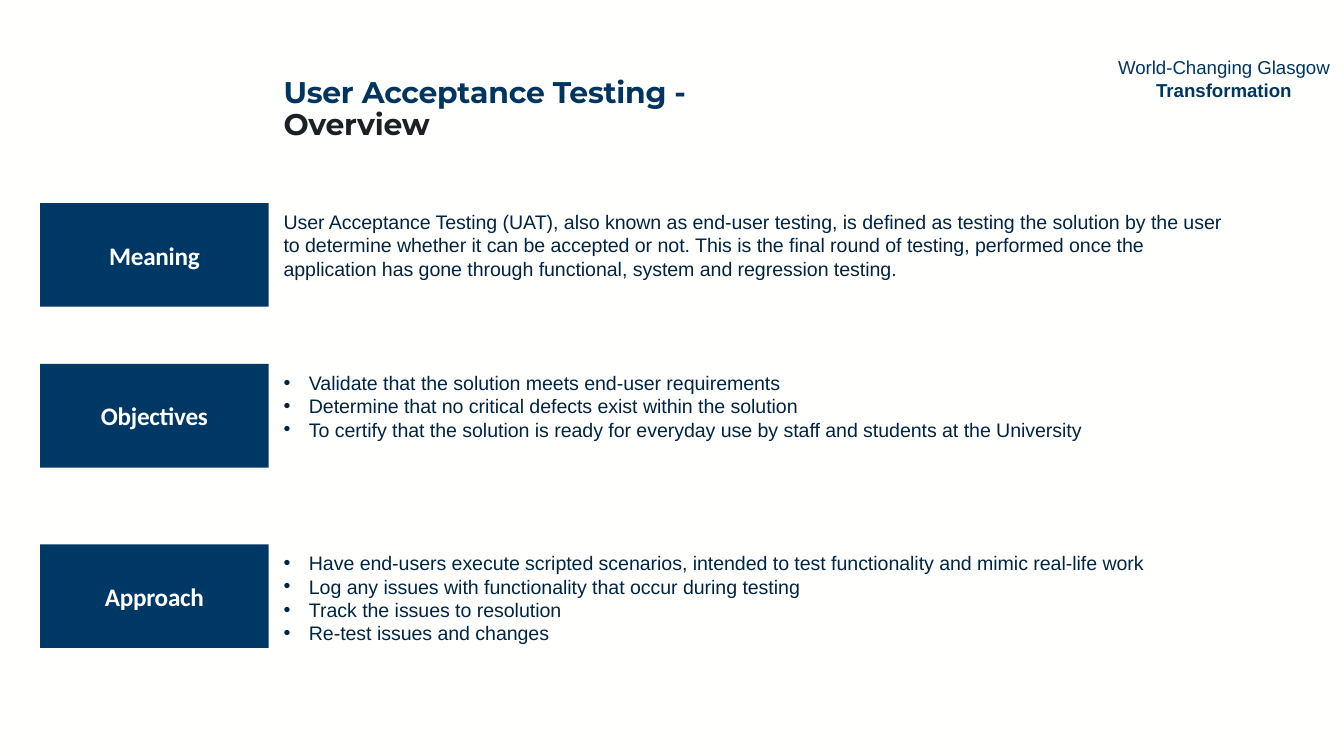
from dataclasses import dataclass

from lxml.etree import SubElement
from pptx import Presentation
from pptx.dml.color import RGBColor
from pptx.enum.shapes import MSO_SHAPE
from pptx.enum.text import MSO_ANCHOR, PP_ALIGN
from pptx.oxml.ns import qn
from pptx.util import Cm, Pt


@dataclass(frozen=True)
class Theme:
    background: str = "FFFFFE"
    navy: str = "00355F"
    label_fill: str = "003865"
    body: str = "002542"
    dark: str = "1B2024"
    body_font: str = "Arial"
    label_font: str = "Calibri"
    title_font: str = "Montserrat"
    header_size: float = 10
    body_size: float = 10.5
    label_size: float = 13.5
    title_size: float = 16


THEME = Theme()

# Row layout, in centimetres
LABEL_LEFT, LABEL_WIDTH, LABEL_HEIGHT = 0.76, 4.32, 1.96
TEXT_LEFT, TEXT_WIDTH = 5.11, 18.44
BULLET_INDENT = 0.48

# Label, top, height of the text, bulleted, paragraphs
ROWS = [
    ("Meaning", 3.84, 1.6, False, [
        "User Acceptance Testing (UAT), also known as end-user testing, is defined as "
        "testing the solution by the user to determine whether it can be accepted or not. "
        "This is the final round of testing, performed once the application has gone "
        "through functional, system and regression testing.",
    ]),
    ("Objectives", 6.88, 1.6, True, [
        "Validate that the solution meets end-user requirements",
        "Determine that no critical defects exist within the solution",
        "To certify that the solution is ready for everyday use by staff and students "
        "at the University",
    ]),
    ("Approach", 10.29, 2.06, True, [
        "Have end-users execute scripted scenarios, intended to test functionality and "
        "mimic real-life work",
        "Log any issues with functionality that occur during testing",
        "Track the issues to resolution",
        "Re-test issues and changes",
    ]),
]


def format_run(run, font_name, size, color, bold=False, spacing=None):
    run.font.name = font_name
    run.font.size = Pt(size)
    run.font.bold = bold
    run.font.color.rgb = RGBColor.from_string(color)
    if spacing is not None:
        run.font._element.set("spc", str(round(spacing * 100)))


def add_text_frame(slide, left, top, width, height):
    text_box = slide.shapes.add_textbox(Cm(left), Cm(top), Cm(width), Cm(height))
    text_box.text_frame.word_wrap = True
    return text_box.text_frame


def add_bullet(paragraph):
    properties = paragraph._p.get_or_add_pPr()
    properties.set("marL", str(Cm(BULLET_INDENT)))
    properties.set("indent", str(-Cm(BULLET_INDENT)))
    SubElement(properties, qn("a:buFont"), typeface=THEME.body_font)
    SubElement(properties, qn("a:buChar"), char="•")


def add_header(slide, left, top, width, height):
    paragraph = add_text_frame(slide, left, top, width, height).paragraphs[0]
    paragraph.alignment = PP_ALIGN.CENTER
    for text, bold in (("World-Changing Glasgow ", False), ("Transformation", True)):
        run = paragraph.add_run()
        run.text = text
        format_run(run, THEME.body_font, THEME.header_size, THEME.navy, bold)


def add_title(slide, left, top, width, height):
    paragraph = add_text_frame(slide, left, top, width, height).paragraphs[0]
    paragraph.text = "User Acceptance Testing -\vOverview"
    paragraph.line_spacing = 0.9
    for run, color in zip(paragraph.runs, (THEME.navy, THEME.dark)):
        format_run(run, THEME.title_font, THEME.title_size, color, True, -0.1)


def add_label(slide, text, left, top, width, height):
    shape = slide.shapes.add_shape(
        MSO_SHAPE.RECTANGLE, Cm(left), Cm(top), Cm(width), Cm(height))
    shape.shadow.inherit = False
    shape.fill.solid()
    shape.fill.fore_color.rgb = RGBColor.from_string(THEME.label_fill)
    shape.line.fill.background()
    text_frame = shape.text_frame
    text_frame.margin_left = text_frame.margin_right = Cm(0.18)
    text_frame.margin_top = text_frame.margin_bottom = Cm(0.1)
    text_frame.vertical_anchor = MSO_ANCHOR.MIDDLE
    text_frame.text = text
    paragraph = text_frame.paragraphs[0]
    paragraph.alignment = PP_ALIGN.CENTER
    format_run(paragraph.runs[0], THEME.label_font, THEME.label_size,
               THEME.background, True, -0.1)


def add_description(slide, lines, bulleted, left, top, width, height):
    text_frame = add_text_frame(slide, left, top, width, height)
    text_frame.text = "\n".join(lines)
    for paragraph in text_frame.paragraphs:
        if bulleted:
            add_bullet(paragraph)
        format_run(paragraph.runs[0], THEME.body_font, THEME.body_size, THEME.body)


def main():
    presentation = Presentation()
    presentation.slide_width, presentation.slide_height = Cm(25.4), Cm(14.29)
    slide = presentation.slides.add_slide(presentation.slide_layouts[6])
    slide.background.fill.solid()
    slide.background.fill.fore_color.rgb = RGBColor.from_string(THEME.background)

    # Header and title
    add_header(slide, 20.78, 0.94, 4.7, 1.12)
    add_title(slide, TEXT_LEFT, 1.35, 15.82, 1.8)

    # Labelled rows
    for label, top, text_height, bulleted, lines in ROWS:
        add_label(slide, label, LABEL_LEFT, top, LABEL_WIDTH, LABEL_HEIGHT)
        add_description(slide, lines, bulleted, TEXT_LEFT, top, TEXT_WIDTH, text_height)

    presentation.save("out.pptx")


if __name__ == "__main__":
    main()
